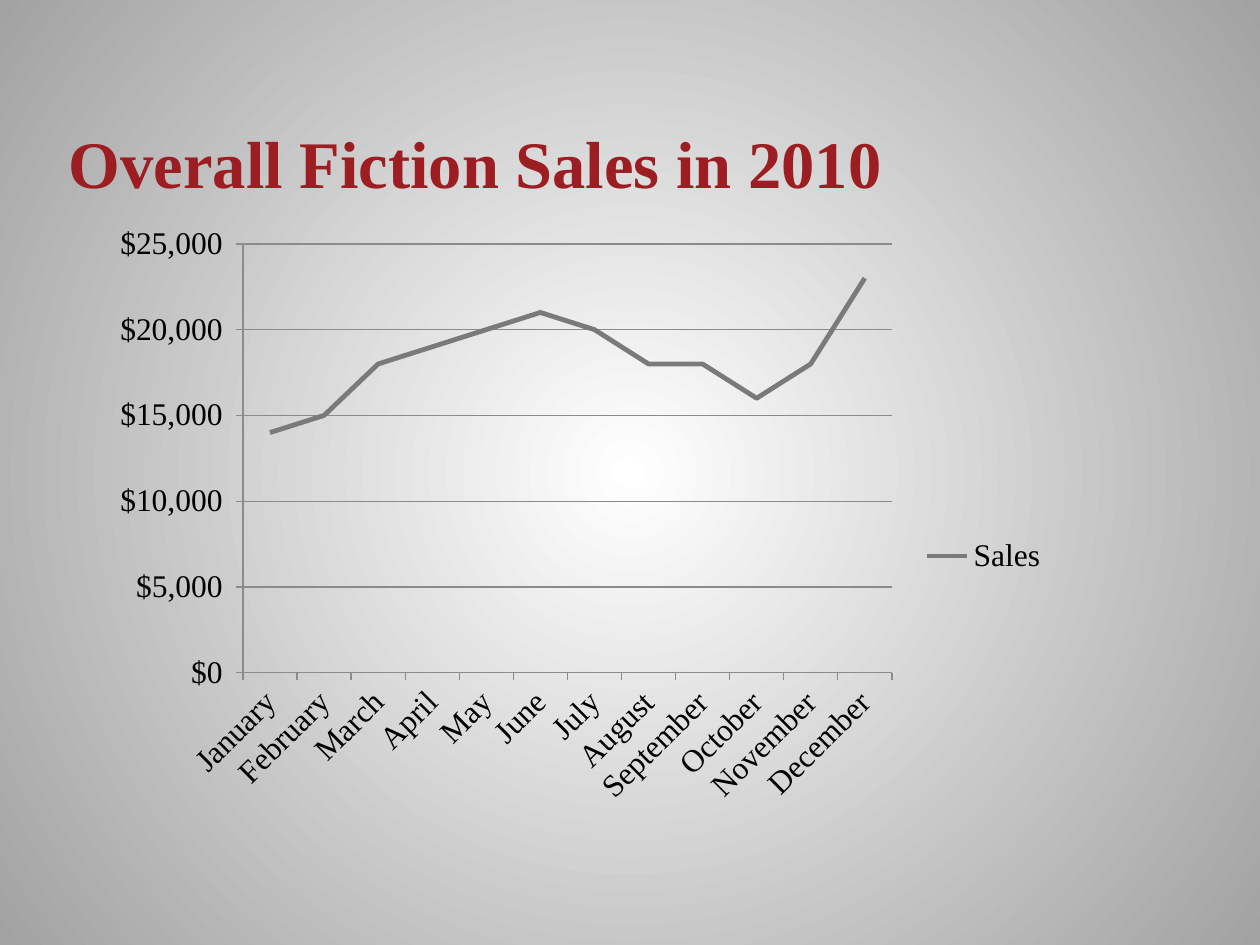
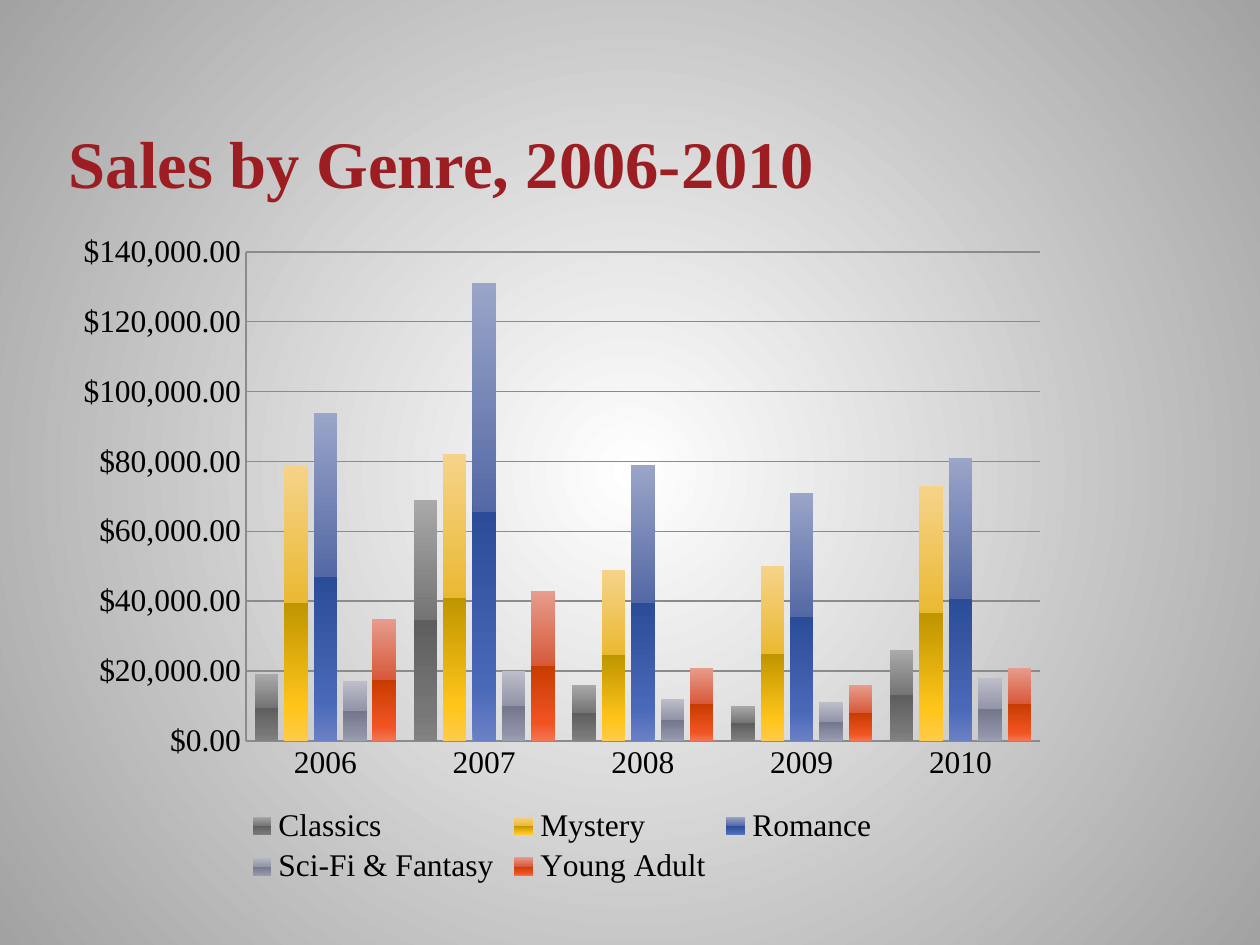
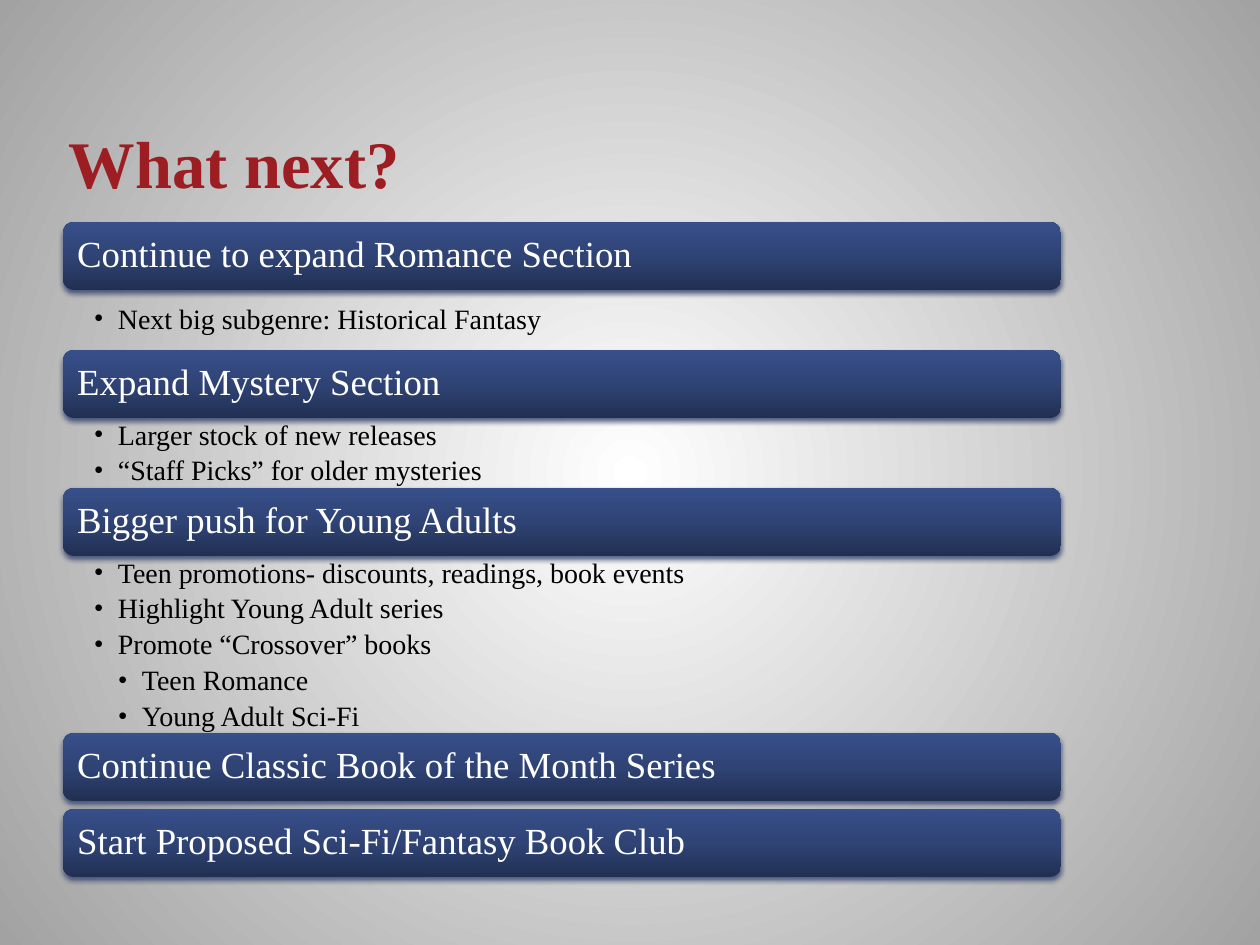
"""Builds three slides on fiction sales: a monthly line, sales by genre and next steps."""
from dataclasses import dataclass
from typing import NamedTuple, Optional

from lxml import etree
from pptx import Presentation
from pptx.chart.chart import Chart
from pptx.chart.data import CategoryChartData
from pptx.dml.color import RGBColor
from pptx.dml.fill import FillFormat
from pptx.enum.chart import XL_CHART_TYPE, XL_LEGEND_POSITION, XL_TICK_MARK
from pptx.enum.shapes import MSO_SHAPE
from pptx.enum.text import MSO_ANCHOR, PP_ALIGN
from pptx.oxml.ns import qn
from pptx.oxml.xmlchemy import BaseOxmlElement
from pptx.slide import Slide, SlideMaster
from pptx.text.text import Font, TextFrame, _Paragraph
from pptx.util import Emu, Pt

EMU_PER_PX = 914400 / 126
LINE = XL_CHART_TYPE.LINE_STACKED
COLUMN = XL_CHART_TYPE.COLUMN_CLUSTERED
LEGEND_RIGHT, LEGEND_BOTTOM = XL_LEGEND_POSITION.RIGHT, XL_LEGEND_POSITION.BOTTOM
TICK_OUT, TICK_NONE = XL_TICK_MARK.OUTSIDE, XL_TICK_MARK.NONE
ROUNDED = MSO_SHAPE.ROUNDED_RECTANGLE
MIDDLE, BOTTOM, TOP = MSO_ANCHOR.MIDDLE, MSO_ANCHOR.BOTTOM, MSO_ANCHOR.TOP
LEFT = PP_ALIGN.LEFT

Stops = tuple[tuple[int, str], ...]


@dataclass(frozen=True)
class Theme:
    """Colours, font and type sizes shared by the slides."""
    font: str = "Times New Roman"
    title: str = "9D1E22"
    text: str = "000000"
    heading: str = "FFFFFF"
    axis: str = "8B8B8B"
    shadow: str = "33436D"
    background: Stops = ((0, "FFFFFF"), (100, "A2A2A2"))
    bar: Stops = ((0, "212F52"), (50, "2F4375"), (100, "374F8A"))
    title_size: int = 38
    heading_size: int = 21
    bullet_size: int = 16
    chart_size: int = 18
    line_spacing: float = 0.9
    bullet_gap: float = 3.2


class Box(NamedTuple):
    """A rectangle in px."""
    left: int
    top: int
    width: int
    height: int

    def emu(self) -> tuple[Emu, ...]:
        """Returns the four lengths in EMU."""
        return tuple(px(length) for length in self)


class Series(NamedTuple):
    """A named row of chart values with its colours from bottom to top."""
    name: str
    values: tuple[int, ...]
    colors: tuple[str, ...]


@dataclass(frozen=True)
class SalesChart:
    """A chart with its axes, legend and plot frame."""
    kind: XL_CHART_TYPE
    categories: tuple[str, ...]
    series: tuple[Series, ...]
    plot: Box
    maximum: int
    step: int
    number_format: str
    tick: XL_TICK_MARK
    legend: XL_LEGEND_POSITION


class Bullet(NamedTuple):
    """A bullet line and its depth."""
    text: str
    depth: int = 1


class Section(NamedTuple):
    """A heading bar, the gap below it and its bullets."""
    heading: str
    gap: int = 0
    bullets_height: int = 0
    bullets: tuple[Bullet, ...] = ()


THEME = Theme()
SLIDE_WIDTH, SLIDE_HEIGHT = 1260, 945
TITLE = Box(63, 44, 998, 158)
BODY = Box(63, 222, 998, 668)
BAR_HEIGHT = 68
BULLET_INDENT = 24
COLUMN_STOPS = (0, 12, 50, 50, 100)

MONTHLY_SALES = SalesChart(
    kind=LINE,
    categories=("January", "February", "March", "April", "May", "June", "July",
                "August", "September", "October", "November", "December"),
    series=(Series("Sales", (14000, 15000, 18000, 19000, 20000, 21000, 20000,
                             18000, 18000, 16000, 18000, 23000), ("7A7A7A",)),),
    plot=Box(243, 244, 649, 429),
    maximum=25000,
    step=5000,
    number_format='"$"#,##0_);[Red]\\("$"#,##0\\)',
    tick=TICK_OUT,
    legend=LEGEND_RIGHT,
)

GENRE_SALES = SalesChart(
    kind=COLUMN,
    categories=("2006", "2007", "2008", "2009", "2010"),
    series=(
        Series("Classics", (19000, 69000, 16000, 10000, 26000),
               ("828282", "777777", "5E5E5E", "747474", "A9A9A9")),
        Series("Mystery", (79000, 82000, 49000, 50000, 73000),
               ("FFCB4A", "FFC51A", "BF9500", "EAB932", "F6D38A")),
        Series("Romance", (94000, 131000, 79000, 71000, 81000),
               ("6B80C4", "4968B8", "2B4C98", "5468A5", "9AA5C8")),
        Series("Sci-Fi & Fantasy", (17000, 20000, 12000, 11000, 18000),
               ("9C9EB1", "8F91A6", "74768C", "9294A8", "BDBEC9")),
        Series("Young Adult", (35000, 43000, 21000, 16000, 21000),
               ("F37552", "F05322", "C83C00", "D7593A", "E79D8D")),
    ),
    plot=Box(246, 252, 794, 489),
    maximum=140000,
    step=20000,
    number_format='"$"#,##0.00',
    tick=TICK_NONE,
    legend=LEGEND_BOTTOM,
)

SECTIONS = (
    Section("Continue to expand Romance Section", 12, 48,
            (Bullet("Next big subgenre: Historical Fantasy"),)),
    Section("Expand Mystery Section", 0, 70,
            (Bullet("Larger stock of new releases"),
             Bullet("“Staff Picks” for older mysteries"))),
    Section("Bigger push for Young Adults", 0, 177,
            (Bullet("Teen promotions- discounts, readings, book events"),
             Bullet("Highlight Young Adult series"),
             Bullet("Promote “Crossover” books"),
             Bullet("Teen Romance", 2),
             Bullet("Young Adult Sci-Fi", 2))),
    Section("Continue Classic Book of the Month Series", 8),
    Section("Start Proposed Sci-Fi/Fantasy Book Club"),
)


def px(length: int) -> Emu:
    """Turns px into EMU."""
    return Emu(round(length * EMU_PER_PX))


def add_element(parent: BaseOxmlElement, tag: str, **attributes: object) -> BaseOxmlElement:
    """Appends a child element with the given attributes."""
    values = {name: str(value) for name, value in attributes.items()}
    return etree.SubElement(parent, qn(tag), values)


def set_gradient(fill: FillFormat, holder: BaseOxmlElement, stops: Stops,
                 radial: bool = False) -> None:
    """Fills with a gradient running upwards, or outwards from the centre."""
    fill.gradient()
    gradient = next(holder.iter(qn("a:gradFill")))
    gradient.clear()
    stop_list = add_element(gradient, "a:gsLst")
    for position, color in stops:
        stop = add_element(stop_list, "a:gs", pos=position * 1000)
        add_element(stop, "a:srgbClr", val=color)
    if radial:
        circle = add_element(gradient, "a:path", path="circle")
        add_element(circle, "a:fillToRect", l=50000, t=50000, r=50000, b=50000)
    else:
        add_element(gradient, "a:lin", ang=16200000, scaled=0)


def style_font(font: Font, size: int, color: str, bold: bool = False) -> None:
    """Sets the shared typeface with a size and colour."""
    font.name = THEME.font
    font.size = Pt(size)
    font.bold = bold
    font.color.rgb = RGBColor.from_string(color)


def style_frame(frame: TextFrame, anchor: MSO_ANCHOR, margins: tuple[int, int, int, int]) -> None:
    """Sets wrapping, anchor and left, top, right and bottom margins."""
    frame.word_wrap = True
    frame.vertical_anchor = anchor
    (frame.margin_left, frame.margin_top,
     frame.margin_right, frame.margin_bottom) = (px(margin) for margin in margins)


def add_title(slide: Slide, text: str) -> None:
    """Adds the slide title."""
    frame = slide.shapes.add_textbox(*TITLE.emu()).text_frame
    style_frame(frame, BOTTOM, (6, 0, 6, 0))
    frame.text = text
    style_font(frame.paragraphs[0].runs[0].font, THEME.title_size, THEME.title, bold=True)


def place_plot(chart: Chart, plot: Box) -> None:
    """Fixes the inner plot area within the chart."""
    area = next(chart.element.iter(qn("c:plotArea")))
    for layout in area.findall(qn("c:layout")):
        area.remove(layout)
    layout = etree.Element(qn("c:layout"))
    area.insert(0, layout)
    manual = add_element(layout, "c:manualLayout")
    settings = {
        "layoutTarget": "inner", "xMode": "edge", "yMode": "edge",
        "x": (plot.left - BODY.left) / BODY.width,
        "y": (plot.top - BODY.top) / BODY.height,
        "w": plot.width / BODY.width,
        "h": plot.height / BODY.height,
    }
    for name, value in settings.items():
        add_element(manual, f"c:{name}", val=value)


def style_axes(chart: Chart, sales: SalesChart) -> None:
    """Sets scale, ticks, number format and lines of both axes."""
    axis_color = RGBColor.from_string(THEME.axis)
    values = chart.value_axis
    values.minimum_scale, values.maximum_scale = 0, sales.maximum
    values.major_unit = sales.step
    values.has_major_gridlines = True
    values.tick_labels.number_format = sales.number_format
    values.tick_labels.number_format_is_linked = False
    for axis in (values, chart.category_axis):
        axis.major_tick_mark = sales.tick
        axis.minor_tick_mark = TICK_NONE
    for line in (values.format.line, chart.category_axis.format.line,
                 values.major_gridlines.format.line):
        line.color.rgb = axis_color
        line.width = Pt(0.75)


def style_series(chart: Chart, sales: SalesChart) -> None:
    """Colours the lines or columns."""
    plot = chart.plots[0]
    plot.vary_by_categories = False
    if sales.kind == COLUMN:
        plot.gap_width, plot.overlap = 75, -25
    elements = chart.element.iter(qn("c:ser"))
    for series, element, source in zip(plot.series, list(elements), sales.series):
        if sales.kind == LINE:
            series.smooth = False
            series.format.line.width = Pt(2.75)
            series.format.line.color.rgb = RGBColor.from_string(source.colors[0])
        else:
            series.invert_if_negative = False
            stops = tuple(zip(COLUMN_STOPS, source.colors))
            set_gradient(series.format.fill, element, stops)


def add_sales_chart(slide: Slide, sales: SalesChart) -> None:
    """Adds a chart in the slide body."""
    data = CategoryChartData()
    data.categories = sales.categories
    for series in sales.series:
        data.add_series(series.name, series.values)
    chart = slide.shapes.add_chart(sales.kind, *BODY.emu(), data).chart
    style_font(chart.font, THEME.chart_size, THEME.text)
    chart.has_title = False
    chart.has_legend = True
    chart.legend.position = sales.legend
    chart.legend.include_in_layout = False
    style_axes(chart, sales)
    style_series(chart, sales)
    place_plot(chart, sales.plot)


def add_heading_bar(slide: Slide, box: Box, text: str) -> None:
    """Adds a rounded bar with a heading."""
    shape = slide.shapes.add_shape(ROUNDED, *box.emu())
    set_gradient(shape.fill, shape.element, THEME.bar)
    shape.line.fill.background()
    shape.shadow.inherit = False
    effects = next(shape.element.iter(qn("a:effectLst")))
    shadow = add_element(effects, "a:outerShdw", blurRad=Pt(3.1), dist=Pt(2),
                         dir=5400000, rotWithShape=0)
    color = add_element(shadow, "a:srgbClr", val=THEME.shadow)
    add_element(color, "a:alpha", val=83000)
    frame = shape.text_frame
    style_frame(frame, MIDDLE, (11, 11, 11, 11))
    frame.text = text
    paragraph = frame.paragraphs[0]
    paragraph.alignment = LEFT
    paragraph.line_spacing = THEME.line_spacing
    style_font(paragraph.runs[0].font, THEME.heading_size, THEME.heading)


def format_bullet(paragraph: _Paragraph, bullet: Bullet) -> None:
    """Writes a bullet line with its hanging indent."""
    paragraph.text = bullet.text
    paragraph.level = bullet.depth
    paragraph.line_spacing = THEME.line_spacing
    paragraph.space_after = Pt(THEME.bullet_gap)
    properties = paragraph._p.get_or_add_pPr()
    properties.set("marL", str(px(BULLET_INDENT * bullet.depth)))
    properties.set("indent", str(px(-BULLET_INDENT)))
    add_element(properties, "a:buFont", typeface=THEME.font)
    add_element(properties, "a:buChar", char="•")
    style_font(paragraph.font, THEME.bullet_size, THEME.text)
    style_font(paragraph.runs[0].font, THEME.bullet_size, THEME.text)


def add_bullets(slide: Slide, box: Box, bullets: tuple[Bullet, ...]) -> None:
    """Adds the bullets below a heading bar."""
    frame = slide.shapes.add_textbox(*box.emu()).text_frame
    style_frame(frame, TOP, (31, 3, 20, 3))
    for index, bullet in enumerate(bullets):
        paragraph = frame.add_paragraph() if index else frame.paragraphs[0]
        format_bullet(paragraph, bullet)


def add_sections(slide: Slide, sections: tuple[Section, ...]) -> None:
    """Stacks heading bars and bullets down the slide body."""
    top = BODY.top
    for section in sections:
        add_heading_bar(slide, Box(BODY.left, top, BODY.width, BAR_HEIGHT), section.heading)
        top += BAR_HEIGHT + section.gap
        if section.bullets:
            box = Box(BODY.left, top, BODY.width, section.bullets_height)
            add_bullets(slide, box, section.bullets)
        top += section.bullets_height


def paint_background(master: SlideMaster) -> None:
    """Gives all slides the radial grey background."""
    set_gradient(master.background.fill, master.element, THEME.background, radial=True)


def main() -> None:
    """Builds and saves the presentation."""
    presentation = Presentation()
    presentation.slide_width, presentation.slide_height = px(SLIDE_WIDTH), px(SLIDE_HEIGHT)
    paint_background(presentation.slide_master)
    pages: tuple[tuple[str, Optional[SalesChart]], ...] = (
        ("Overall Fiction Sales in 2010", MONTHLY_SALES),
        ("Sales by Genre, 2006-2010", GENRE_SALES),
        ("What next?", None),
    )
    for title, sales in pages:
        slide = presentation.slides.add_slide(presentation.slide_layouts[6])
        add_title(slide, title)
        if sales:
            add_sales_chart(slide, sales)
        else:
            add_sections(slide, SECTIONS)
    presentation.save("out.pptx")


if __name__ == "__main__":
    main()
